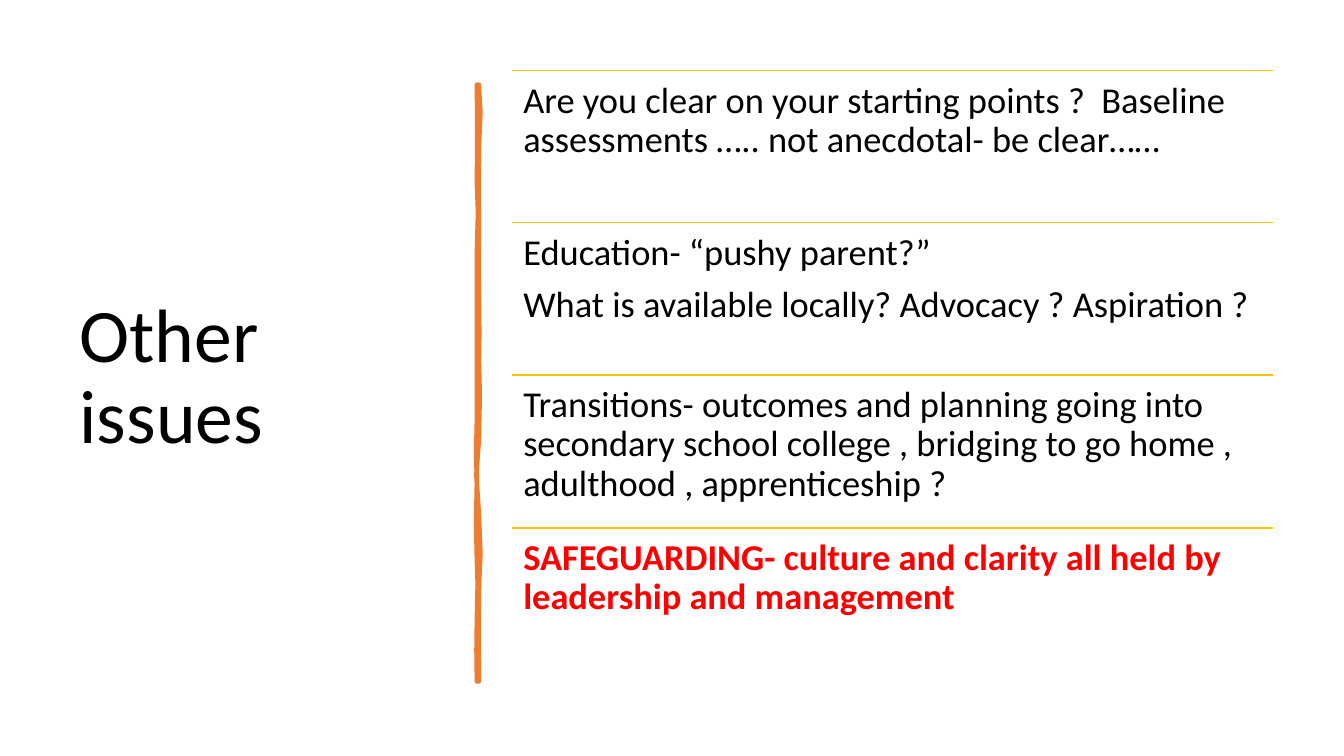
import pptx
import pptx.util
import pptx.dml.color
import pptx.enum.shapes
import pptx.enum.text
import pptx.oxml.ns
import lxml.etree

Inches, Pt = pptx.util.Inches, pptx.util.Pt

# Content
TITLE = "Other issues"
ISSUES = [
    (["Are you clear on your starting points ?  Baseline assessments ….. not anecdotal- be clear……"], False),
    (["Education- “pushy parent?”", "What is available locally? Advocacy ? Aspiration ?"], False),
    (["Transitions- outcomes and planning going into secondary school college , "
      "bridging to go home , adulthood , apprenticeship ?"], False),
    (["SAFEGUARDING- culture and clarity all held by leadership and management"], True),
]
COLORS = {"text": "000000", "alert": "FF0000", "rule": "FFC000", "brush": "ED7D31"}
FONT = "Calibri"

# Brush stroke: start point, then Bezier segments (control, control, end)
BRUSH_START = (4.75, 0.84)
BRUSH_CURVES = [
    ((4.77, 1.02), (4.77, 1.19), (4.75, 1.46)),
    ((4.73, 1.73), (4.76, 1.95), (4.75, 2.26)),
    ((4.74, 2.57), (4.75, 2.62), (4.75, 2.94)),
    ((4.74, 3.25), (4.77, 3.42), (4.75, 3.56)),
    ((4.73, 3.70), (4.79, 4.14), (4.75, 4.36)),
    ((4.71, 4.57), (4.72, 4.84), (4.75, 5.10)),
    ((4.77, 5.36), (4.77, 5.64), (4.75, 5.84)),
    ((4.73, 6.03), (4.76, 6.50), (4.75, 6.76)),
    ((4.74, 6.76), (4.73, 6.76), (4.73, 6.76)),
    ((4.74, 6.46), (4.71, 6.44), (4.73, 6.13)),
    ((4.74, 5.83), (4.74, 5.70), (4.73, 5.57)),
    ((4.72, 5.44), (4.72, 4.95), (4.73, 4.77)),
    ((4.73, 4.59), (4.71, 4.45), (4.73, 4.15)),
    ((4.74, 3.86), (4.72, 3.73), (4.73, 3.35)),
    ((4.74, 2.98), (4.72, 2.81), (4.73, 2.50)),
    ((4.74, 2.18), (4.75, 2.00), (4.73, 1.81)),
    ((4.70, 1.63), (4.77, 1.04), (4.73, 0.84)),
]
CURVE_STEPS = 2
UNITS = 1000  # outline units per inch

# Layout of the issue rows
LEFT, TOP, WIDTH, BOTTOM = 5.08, 0.7, 7.55, 6.75
ROW = (BOTTOM - TOP) / len(ISSUES)
INSET = 0.11


def rgb(name):
    return pptx.dml.color.RGBColor.from_string(COLORS[name])


def add_run(p, text, size, color, bold=False):
    p.line_spacing = 0.9
    r = p.add_run()
    r.text = text
    r.font.name, r.font.size, r.font.bold = FONT, Pt(size), bold
    r.font.color.rgb = rgb(color)


def curve_points(start, curves):
    points = [start]
    for c1, c2, end in curves:
        for step in range(1, CURVE_STEPS + 1):
            t = step / CURVE_STEPS
            u = 1 - t
            points.append(tuple(
                u**3 * a + 3 * u * u * t * b + 3 * u * t * t * c + t**3 * d
                for a, b, c, d in zip(start, c1, c2, end)))
        start = end
    return [(x * UNITS, y * UNITS) for x, y in points]


prs = pptx.Presentation()
prs.slide_width, prs.slide_height = Inches(13.33), Inches(7.5)
s = prs.slides.add_slide(prs.slide_layouts[5])

# Title
title = s.shapes.title
title.left, title.top, title.width, title.height = map(Inches, (0.69, 0.7, 3.74, 6.11))
tf = title.text_frame
tf.word_wrap = True
tf.auto_size = pptx.enum.text.MSO_AUTO_SIZE.NONE
tf.vertical_anchor = pptx.enum.text.MSO_ANCHOR.MIDDLE
tf.paragraphs[0].alignment = pptx.enum.text.PP_ALIGN.LEFT
add_run(tf.paragraphs[0], TITLE, 54, "text")

# Hand-drawn divider
start, *outline = curve_points(BRUSH_START, BRUSH_CURVES)
builder = s.shapes.build_freeform(*start, scale=Inches(1) / UNITS)
builder.add_line_segments(outline, close=True)
brush = builder.convert_to_shape()
brush.shadow.inherit = False
brush.fill.solid()
brush.fill.fore_color.rgb = rgb("brush")
brush.line.color.rgb = rgb("brush")
brush.line.width = Pt(3.25)

# Issue rows, each under a rule
for i, (paragraphs, alert) in enumerate(ISSUES):
    y = Inches(round(TOP + i * ROW, 2))
    rule = s.shapes.add_connector(pptx.enum.shapes.MSO_CONNECTOR.STRAIGHT,
                                  Inches(LEFT), y, Inches(LEFT + WIDTH), y)
    rule.line.color.rgb = rgb("rule")
    rule.line.width = Pt(1)
    lxml.etree.SubElement(rule._element.spPr, pptx.oxml.ns.qn("a:effectLst"))

    box = s.shapes.add_textbox(Inches(LEFT), y, Inches(WIDTH), Inches(ROW))
    tf = box.text_frame
    tf.word_wrap = True
    tf.margin_left = tf.margin_right = tf.margin_top = tf.margin_bottom = Inches(INSET)
    for j, text in enumerate(paragraphs):
        p = tf.add_paragraph() if j else tf.paragraphs[0]
        p.space_after = Pt(9)
        add_run(p, text, 26, "alert" if alert else "text", alert)

prs.save("out.pptx")
